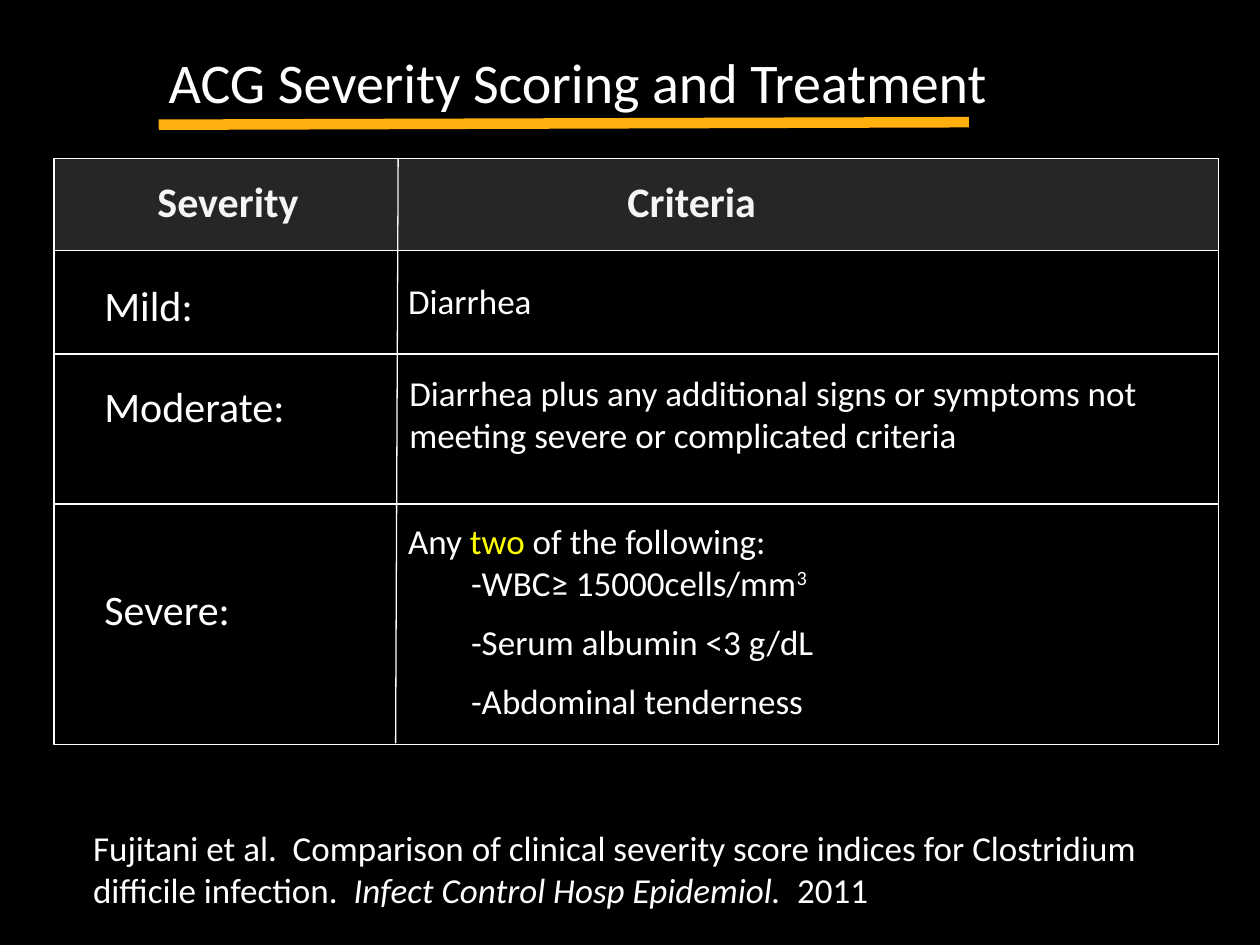
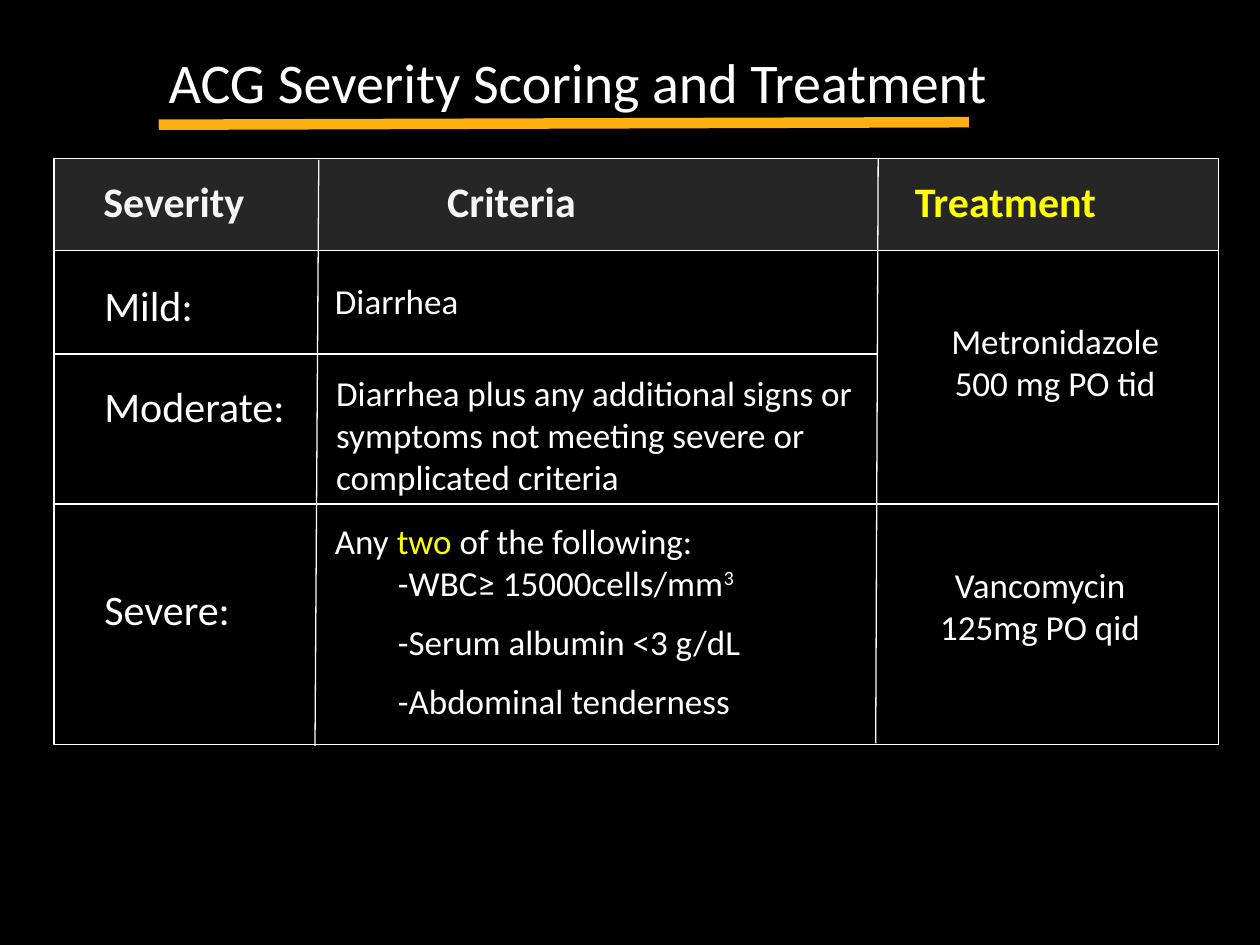
"""Build two slides on ACG severity scoring and treatment."""
import dataclasses

import lxml.etree
import pptx
import pptx.dml.color
import pptx.enum.shapes
import pptx.enum.text
import pptx.oxml.ns
import pptx.util

PX = 9144
CENTER = pptx.enum.text.PP_ALIGN.CENTER


@dataclasses.dataclass(frozen=True)
class Theme:
    """Colours, font and type sizes shared by the slides."""
    font: str = "Calibri"
    background: str = "000000"
    text: str = "FFFFFF"
    accent: str = "FFFF00"
    underline: str = "FFAF0E"
    band: str = "CCCCCC"
    title_size: int = 32
    heading_size: int = 24
    body_size: int = 20
    rule_width: float = 0.75
    underline_width: int = 6


THEME = Theme()
GRID_LEFT, GRID_TOP, GRID_WIDTH, GRID_HEIGHT = 43, 126, 924, 465
GRID_RIGHT = GRID_LEFT + GRID_WIDTH
BAND_HEIGHT = 73
MILD_BOTTOM, MODERATE_BOTTOM = 281, 400
HEADING_TOP, HEADING_WIDTH, HEADING_HEIGHT = 134, 226, 50


def px(*lengths):
    """Turn px lengths into EMU."""
    return [pptx.util.Emu(length * PX) for length in lengths]


def rgb(colour):
    """Turn a hex string into a colour."""
    return pptx.dml.color.RGBColor.from_string(colour)


def apply_formats(target, formats):
    """Set each attribute named in the dict."""
    for name, value in formats.items():
        setattr(target, name, value)


def add_run(paragraph, text, size, colour=THEME.text, superscript=False, **formats):
    """Add one formatted run."""
    run = paragraph.add_run()
    run.text = text
    apply_formats(run.font, {"name": THEME.font, "size": pptx.util.Pt(size), **formats})
    run.font.color.rgb = rgb(colour)
    if superscript:
        run.font._element.set("baseline", "30000")


def add_text(slide, box, paragraphs, size=THEME.body_size, **run_formats):
    """Add a text box from (runs, paragraph formats, indent) entries."""
    frame = slide.shapes.add_textbox(*px(*box)).text_frame
    frame.word_wrap = True
    for index, (runs, formats, indent) in enumerate(paragraphs):
        paragraph = frame.add_paragraph() if index else frame.paragraphs[0]
        apply_formats(paragraph, formats)
        if indent:
            paragraph._p.get_or_add_pPr().set("marL", str(indent * PX))
        for text, own_formats in runs:
            add_run(paragraph, text, size, **{**run_formats, **own_formats})


def line_of(text, indent=0, **formats):
    """Describe a paragraph holding a single run."""
    return [(text, {})], formats, indent


def add_line(slide, start, end, colour=THEME.text, width=THEME.rule_width):
    """Draw a straight line without a shadow."""
    connector = slide.shapes.add_connector(
        pptx.enum.shapes.MSO_CONNECTOR.STRAIGHT, *px(*start, *end))
    connector.line.color.rgb = rgb(colour)
    connector.line.width = pptx.util.Pt(width)
    lxml.etree.SubElement(connector._element.spPr, pptx.oxml.ns.qn("a:effectLst"))


def add_frame(slide, height, opacity=None):
    """Draw a grid rectangle, filled with the band colour if opacity is given."""
    shape = slide.shapes.add_shape(
        pptx.enum.shapes.MSO_SHAPE.RECTANGLE,
        *px(GRID_LEFT, GRID_TOP, GRID_WIDTH, height))
    shape.shadow.inherit = False
    shape.line.color.rgb = rgb(THEME.text)
    shape.line.width = pptx.util.Pt(THEME.rule_width)
    if opacity is None:
        shape.fill.background()
        return
    shape.fill.solid()
    shape.fill.fore_color.rgb = rgb(THEME.band)
    colour = shape._element.spPr.find(".//" + pptx.oxml.ns.qn("a:srgbClr"))
    alpha = lxml.etree.SubElement(colour, pptx.oxml.ns.qn("a:alpha"))
    alpha.set("val", str(opacity * 1000))


def add_heading(slide, left, text, colour=THEME.text):
    """Add a bold, centred column heading."""
    add_text(slide, (left, HEADING_TOP, HEADING_WIDTH, HEADING_HEIGHT),
             [line_of(text, alignment=CENTER)], THEME.heading_size,
             colour=colour, bold=True)


def add_title(slide):
    """Add the underlined title."""
    add_line(slide, (126, 99), (769, 97), THEME.underline, THEME.underline_width)
    add_text(slide, (124, 33, 676, 64),
             [line_of("ACG Severity Scoring and Treatment")], THEME.title_size)


def add_severity_labels(slide):
    """Add the row labels of the first column."""
    add_text(slide, (73, 217, 254, 374), [
        line_of("Mild:"),
        line_of("Moderate:", space_before=pptx.util.Pt(29)),
        line_of("Severe:", space_before=pptx.util.Pt(87)),
    ], THEME.heading_size)


def add_criteria(slide, left, moderate_width):
    """Add the criteria for each severity."""
    gap = {"space_before": pptx.util.Pt(9.8)}
    add_text(slide, (left, 217, 119, 44), [line_of("Diarrhea")])
    add_text(slide, (left + 1, 290, moderate_width, 178), [line_of(
        "Diarrhea plus any additional signs or symptoms not meeting "
        "severe or complicated criteria")])
    add_text(slide, (left, 407, 500, 172), [
        ([("Any ", {}), ("two", {"colour": THEME.accent}),
          (" of the following:", {})], {}, 0),
        ([("-WBC≥ 15000cells/mm", {}), ("3", {"superscript": True})], {}, 50),
        line_of("-Serum albumin <3 g/dL", 50, **gap),
        line_of("-Abdominal tenderness", 50, **gap),
    ])


def add_treatment(slide, left, top, *lines):
    """Add a centred treatment entry."""
    add_text(slide, (left, top, 257, 77),
             [line_of(text, alignment=CENTER) for text in lines])


def add_scoring_slide(presentation, severity_left, criteria_heading_left,
                      divider, criteria_left, moderate_width, mild_rule_right):
    """Add a slide with the title and the severity grid."""
    slide = presentation.slides.add_slide(presentation.slide_layouts[6])
    add_severity_labels(slide)
    add_heading(slide, severity_left, "Severity")
    add_heading(slide, criteria_heading_left, "Criteria")
    add_frame(slide, GRID_HEIGHT)
    add_line(slide, *divider)
    add_frame(slide, BAND_HEIGHT, opacity=19)
    add_title(slide)
    add_line(slide, (GRID_LEFT, MILD_BOTTOM), (mild_rule_right, MILD_BOTTOM))
    add_line(slide, (GRID_LEFT, MODERATE_BOTTOM), (GRID_RIGHT, MODERATE_BOTTOM))
    add_criteria(slide, criteria_left, moderate_width)
    return slide


def main():
    """Build and save the presentation."""
    presentation = pptx.Presentation()
    width, height = px(1000, 750)
    apply_formats(presentation, {"slide_width": width, "slide_height": height})
    background = presentation.slide_master.background.fill
    background.solid()
    background.fore_color.rgb = rgb(THEME.background)

    criteria_slide = add_scoring_slide(
        presentation, 68, 436, ((316, 126), (314, 590)), 314, 651, GRID_RIGHT)
    add_text(criteria_slide, (64, 651, 905, 77), [([
        ("Fujitani et al.  Comparison of clinical severity score indices for "
         "Clostridium difficile infection.  ", {}),
        ("Infect Control Hosp Epidemiol.  ", {"italic": True}),
        ("2011", {}),
    ], {}, 0)])

    treatment_slide = add_scoring_slide(
        presentation, 25, 293, ((253, 127), (250, 592)), 256, 440, 697)
    add_line(treatment_slide, (697, 126), (695, 590))
    add_heading(treatment_slide, 685, "Treatment", THEME.accent)
    add_treatment(treatment_slide, 709, 249, "Metronidazole", "500 mg PO tid")
    add_treatment(treatment_slide, 697, 442, "Vancomycin", "125mg PO qid")

    presentation.save("out.pptx")


if __name__ == "__main__":
    main()
